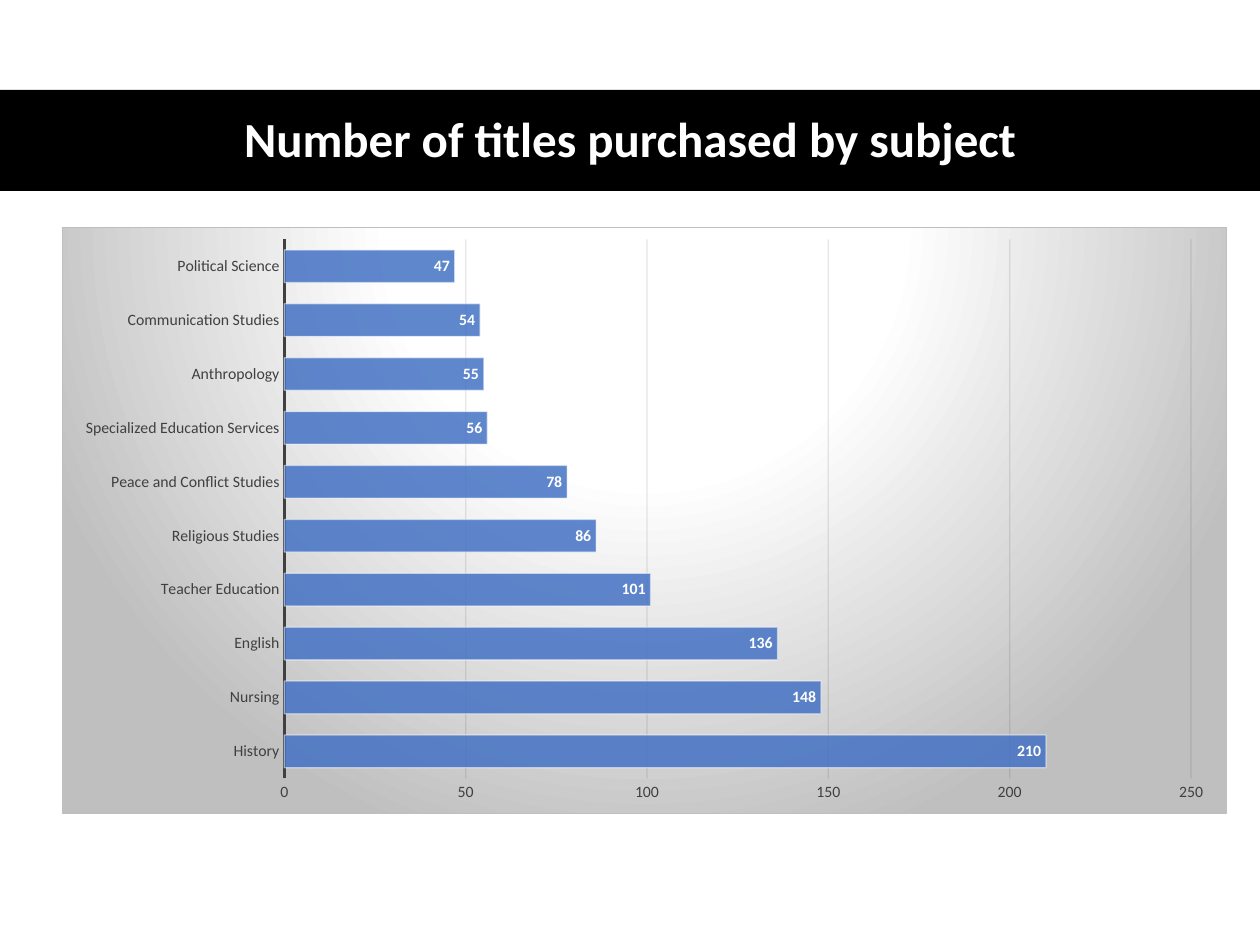
import lxml.etree
import pptx
import pptx.chart.data
import pptx.dml.color
import pptx.enum.chart
import pptx.enum.shapes
import pptx.enum.text
import pptx.oxml
import pptx.oxml.ns
import pptx.util

FONT = "Calibri"
TITLES_BY_SUBJECT = {
    "History": 210,
    "Nursing": 148,
    "English": 136,
    "Teacher Education": 101,
    "Religious Studies": 86,
    "Peace and Conflict Studies": 78,
    "Specialized Education Services": 56,
    "Anthropology": 55,
    "Communication Studies": 54,
    "Political Science": 47,
}
PANEL_XML = f"""<c:spPr {pptx.oxml.ns.nsdecls("c", "a")}>
  <a:gradFill rotWithShape="1">
    <a:gsLst>
      <a:gs pos="0"><a:srgbClr val="FFFFFF"/></a:gs>
      <a:gs pos="39000"><a:srgbClr val="FFFFFF"/></a:gs>
      <a:gs pos="100000"><a:srgbClr val="BFBFBF"/></a:gs>
    </a:gsLst>
    <a:path path="circle">
      <a:fillToRect l="50000" t="-80000" r="50000" b="180000"/>
    </a:path>
  </a:gradFill>
  <a:ln w="9525"><a:solidFill><a:srgbClr val="BFBFBF"/></a:solidFill></a:ln>
</c:spPr>"""


def px(length):
    return pptx.util.Emu(round(length * 914400 / 126))


def box(*lengths):
    return [px(length) for length in lengths]


def color(value):
    return pptx.dml.color.RGBColor.from_string(value)


def style_font(font, size, ink, bold=False):
    font.name = FONT
    font.size = pptx.util.Pt(size)
    font.bold = bold
    font.color.rgb = color(ink)


def style_line(line, ink, width):
    line.color.rgb = color(ink)
    line.width = pptx.util.Pt(width)


def set_opacity(element, query, percent):
    for ink in element.xpath(query):
        alpha = lxml.etree.SubElement(ink, pptx.oxml.ns.qn("a:alpha"))
        alpha.set("val", str(percent * 1000))


def add_band(slide, bounds, fill):
    band = slide.shapes.add_shape(
        pptx.enum.shapes.MSO_SHAPE.RECTANGLE, *box(*bounds))
    band.shadow.inherit = False
    band.fill.solid()
    band.fill.fore_color.rgb = color(fill)
    band.line.fill.background()


def add_text(slide, text, bounds, size, ink, bold=False):
    frame = slide.shapes.add_textbox(*box(*bounds)).text_frame
    frame.word_wrap = True
    frame.vertical_anchor = pptx.enum.text.MSO_ANCHOR.MIDDLE
    paragraph = frame.paragraphs[0]
    paragraph.alignment = pptx.enum.text.PP_ALIGN.CENTER
    paragraph.line_spacing = 0.9
    run = paragraph.add_run()
    run.text = text
    style_font(run.font, size, ink, bold)


def style_axes(chart):
    for axis in (chart.category_axis, chart.value_axis):
        axis.major_tick_mark = pptx.enum.chart.XL_TICK_MARK.NONE
        axis.minor_tick_mark = pptx.enum.chart.XL_TICK_MARK.NONE
        style_font(axis.tick_labels.font, 9, "404040")
    style_line(chart.category_axis.format.line, "404040", 1.5)
    counts = chart.value_axis
    counts.minimum_scale, counts.maximum_scale, counts.major_unit = 0, 250, 50
    counts.format.line.fill.background()
    counts.has_major_gridlines = True
    style_line(counts.major_gridlines.format.line, "0D0D0D", 0.75)


def style_bars(plot):
    plot.gap_width = 65
    plot.vary_by_categories = False
    bars = plot.series[0]
    bars.invert_if_negative = False
    bars.format.fill.solid()
    bars.format.fill.fore_color.rgb = color("4472C4")
    style_line(bars.format.line, "FFFFFF", 0.75)
    labels = bars.data_labels
    labels.show_value = True
    labels.position = pptx.enum.chart.XL_LABEL_POSITION.INSIDE_END
    style_font(labels.font, 9, "FFFFFF", bold=True)


def add_subject_chart(slide, bounds):
    purchases = pptx.chart.data.CategoryChartData()
    purchases.categories = list(TITLES_BY_SUBJECT)
    purchases.add_series("Series 1", list(TITLES_BY_SUBJECT.values()))
    chart = slide.shapes.add_chart(
        pptx.enum.chart.XL_CHART_TYPE.BAR_CLUSTERED, *box(*bounds), purchases).chart
    chart.has_legend = False
    chart.has_title = False
    style_font(chart.font, 10, "000000")
    style_axes(chart)
    style_bars(chart.plots[0])
    root = chart.element
    root.xpath("c:chart")[0].addnext(pptx.oxml.parse_xml(PANEL_XML))
    set_opacity(root, ".//c:ser/c:spPr/a:solidFill/a:srgbClr", 85)
    set_opacity(root, ".//c:ser/c:spPr/a:ln//a:srgbClr", 50)
    set_opacity(root, ".//c:majorGridlines//a:srgbClr", 10)


def main():
    deck = pptx.Presentation()
    deck.slide_width, deck.slide_height = box(1260, 945)
    slide = deck.slides.add_slide(deck.slide_layouts[6])
    add_band(slide, (0, 90, 1260, 101), "000000")
    add_text(slide, "Number of titles purchased by subject",
             (87, 93, 1086, 98), size=28, ink="FFFFFF", bold=True)
    add_subject_chart(slide, (62, 227, 1165, 587))
    deck.save("out.pptx")


if __name__ == "__main__":
    main()
